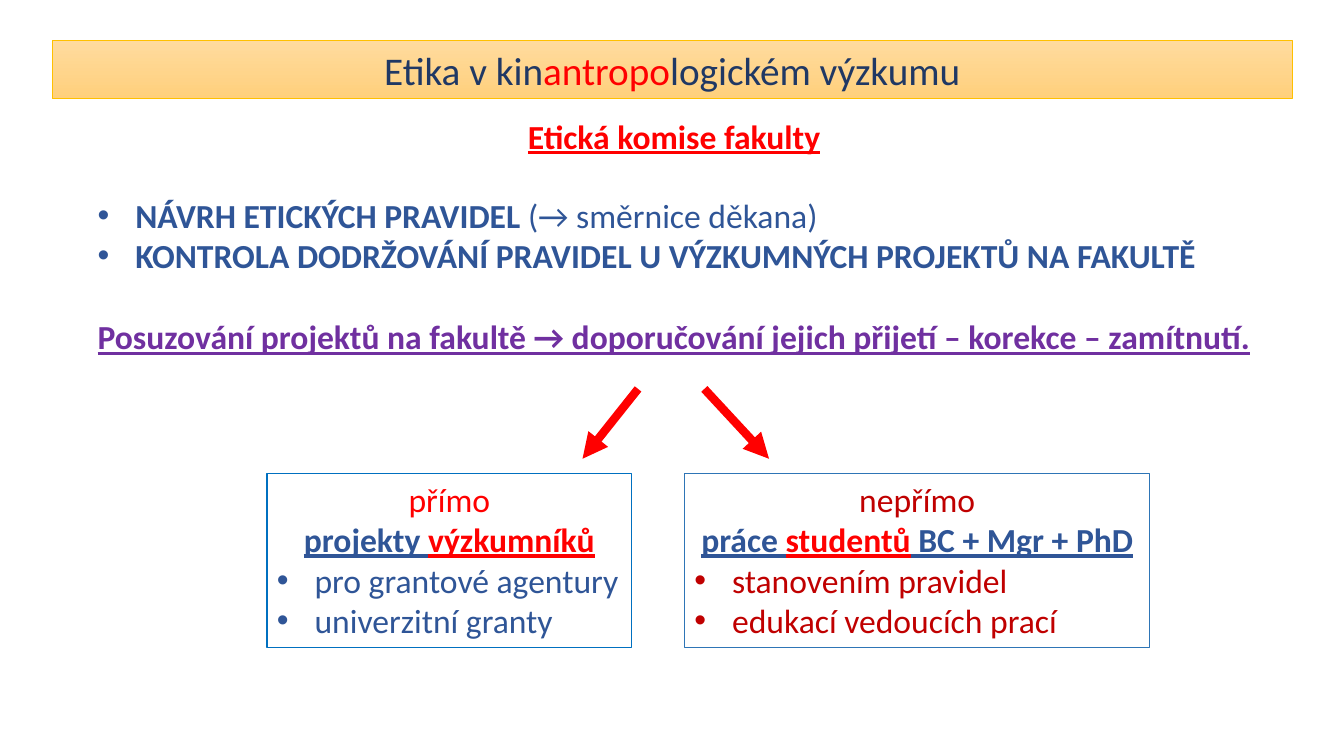
from lxml.etree import SubElement
from pptx import Presentation
from pptx.dml.color import RGBColor
from pptx.enum.shapes import MSO_CONNECTOR, MSO_SHAPE
from pptx.enum.text import MSO_ANCHOR, PP_ALIGN
from pptx.oxml.ns import qn
from pptx.util import Cm, Pt

RED, DARK_RED, BLUE = "FF0000", "C00000", "2F5597"
NAVY, PURPLE = "203864", "7030A0"


def color(hex_code):
    return RGBColor.from_string(hex_code)


class EthicsPage:
    font = "Calibri"
    size = 24
    indent = Cm(0.95)

    def __init__(self, deck):
        self.page = deck.slides.add_slide(deck.slide_layouts[6])

    def fill_text(self, frame, paragraphs):
        """Each paragraph is (spans, options); each span is (text, colour[, bold])."""
        frame.word_wrap = True
        for index, (spans, options) in enumerate(paragraphs):
            para = frame.paragraphs[0] if index == 0 else frame.add_paragraph()
            para.alignment = PP_ALIGN.CENTER if options.get("center") else PP_ALIGN.LEFT
            para.space_before = Pt(options.get("gap", 0))
            para.font.name = self.font
            para.font.size = Pt(options.get("size", self.size))
            para.font.underline = options.get("underline", False)
            if options.get("bullet"):
                self.add_bullet(para)
            for text, hex_code, *weight in spans:
                span = para.add_run()
                span.text = text
                span.font.color.rgb = color(hex_code)
                span.font.bold = weight[0] if weight else options.get("bold", False)

    def add_bullet(self, para):
        properties = para._p.get_or_add_pPr()
        properties.set("marL", str(self.indent))
        properties.set("indent", str(-self.indent))
        first = properties.find(qn("a:defRPr"))
        bullet_font = SubElement(properties, qn("a:buFont"), typeface="Arial")
        bullet = SubElement(properties, qn("a:buChar"), char="•")
        if first is not None:
            first.addprevious(bullet_font)
            first.addprevious(bullet)

    def text(self, left, top, width, height, paragraphs):
        box = self.page.shapes.add_textbox(Cm(left), Cm(top), Cm(width), Cm(height))
        self.fill_text(box.text_frame, paragraphs)

    def panel(self, left, top, width, height, line, weight, paragraphs,
              gradient=None, anchor=MSO_ANCHOR.TOP):
        box = self.page.shapes.add_shape(
            MSO_SHAPE.RECTANGLE, Cm(left), Cm(top), Cm(width), Cm(height))
        box.shadow.inherit = False
        box.line.color.rgb = color(line)
        box.line.width = Pt(weight)
        if gradient:
            box.fill.gradient()
            box.fill.gradient_angle = 270
            for stop, hex_code in zip(box.fill.gradient_stops, gradient):
                stop.color.rgb = color(hex_code)
        else:
            box.fill.background()
        box.text_frame.vertical_anchor = anchor
        self.fill_text(box.text_frame, paragraphs)

    def arrow(self, start_x, start_y, end_x, end_y):
        arrow = self.page.shapes.add_connector(
            MSO_CONNECTOR.STRAIGHT, Cm(start_x), Cm(start_y), Cm(end_x), Cm(end_y))
        arrow.line.color.rgb = color(RED)
        arrow.line.width = Pt(6)
        SubElement(arrow.line._get_or_add_ln(), qn("a:tailEnd"), type="triangle")
        SubElement(arrow._element.spPr, qn("a:effectLst"))


def main():
    deck = Presentation()
    deck.slide_width, deck.slide_height = Cm(33.87), Cm(19.05)
    page = EthicsPage(deck)
    center, bullet = {"center": True}, {"bullet": True}
    heading = {"center": True, "bold": True, "underline": True}
    blank_line = 29.3

    # Title bar
    page.panel(1.32, 1.02, 31.24, 1.47, "FFC000", 0.5, [
        ([("Etika v kin", NAVY), ("antropo", RED), ("logickém výzkumu", NAVY)],
         {"center": True, "size": 28}),
    ], gradient=("FFDB9E", "FFD07C"), anchor=MSO_ANCHOR.MIDDLE)

    # Committee and its tasks
    page.text(1.37, 2.79, 31.24, 1.27, [([("Etická komise fakulty", RED)], heading)])
    page.text(2.21, 4.78, 29.8, 4.37, [
        ([("NÁVRH ETICKÝCH PRAVIDEL ", BLUE, True), ("(→ směrnice děkana)", BLUE)], bullet),
        ([("KONTROLA DODRŽOVÁNÍ PRAVIDEL U VÝZKUMNÝCH PROJEKTŮ NA FAKULTĚ", BLUE, True)],
         bullet),
        ([("Posuzování projektů na fakultě → doporučování jejich přijetí"
           " – korekce – zamítnutí.", PURPLE)],
         {"bold": True, "underline": True, "gap": blank_line}),
    ])

    # Direct and indirect review
    reviews = [
        (6.73, 9.19, "0070C0", ("přímo", RED),
         [("projekty ", BLUE), ("výzkumníků", RED)],
         BLUE, ["pro grantové agentury", "univerzitní granty"]),
        (17.25, 11.73, "2E75B6", ("nepřímo", DARK_RED),
         [("práce ", BLUE), ("studentů", RED), (" BC + Mgr + PhD", BLUE)],
         DARK_RED, ["stanovením pravidel", "edukací vedoucích prací"]),
    ]
    for left, width, line, manner, subject, item_color, items in reviews:
        page.panel(left, 11.94, width, 4.37, line, 0.75, [
            ([manner], center),
            (subject, heading),
            *[([(item, item_color)], bullet) for item in items],
        ])

    # Arrows to the two panels
    for start_x, end_x in [(17.75, 19.38), (16.08, 14.68)]:
        page.arrow(start_x, 9.8, end_x, 11.56)

    deck.save("out.pptx")


if __name__ == "__main__":
    main()
